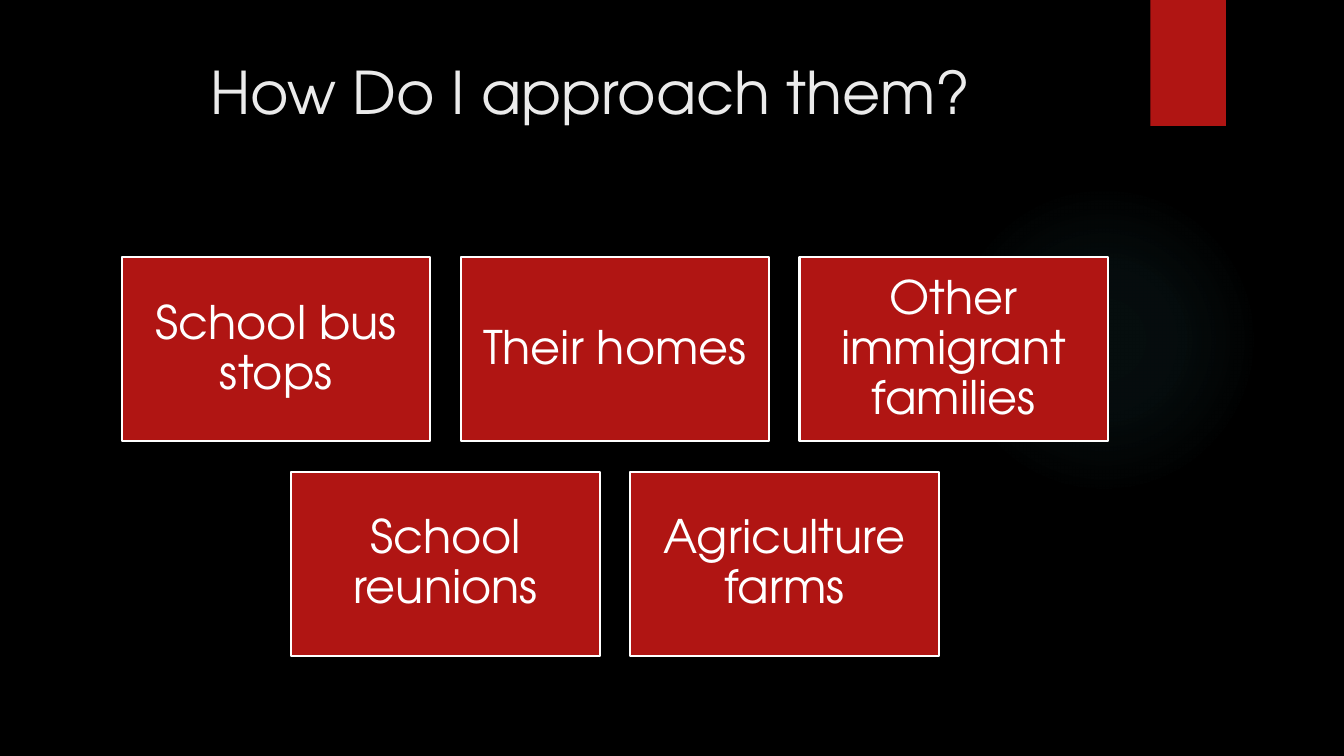
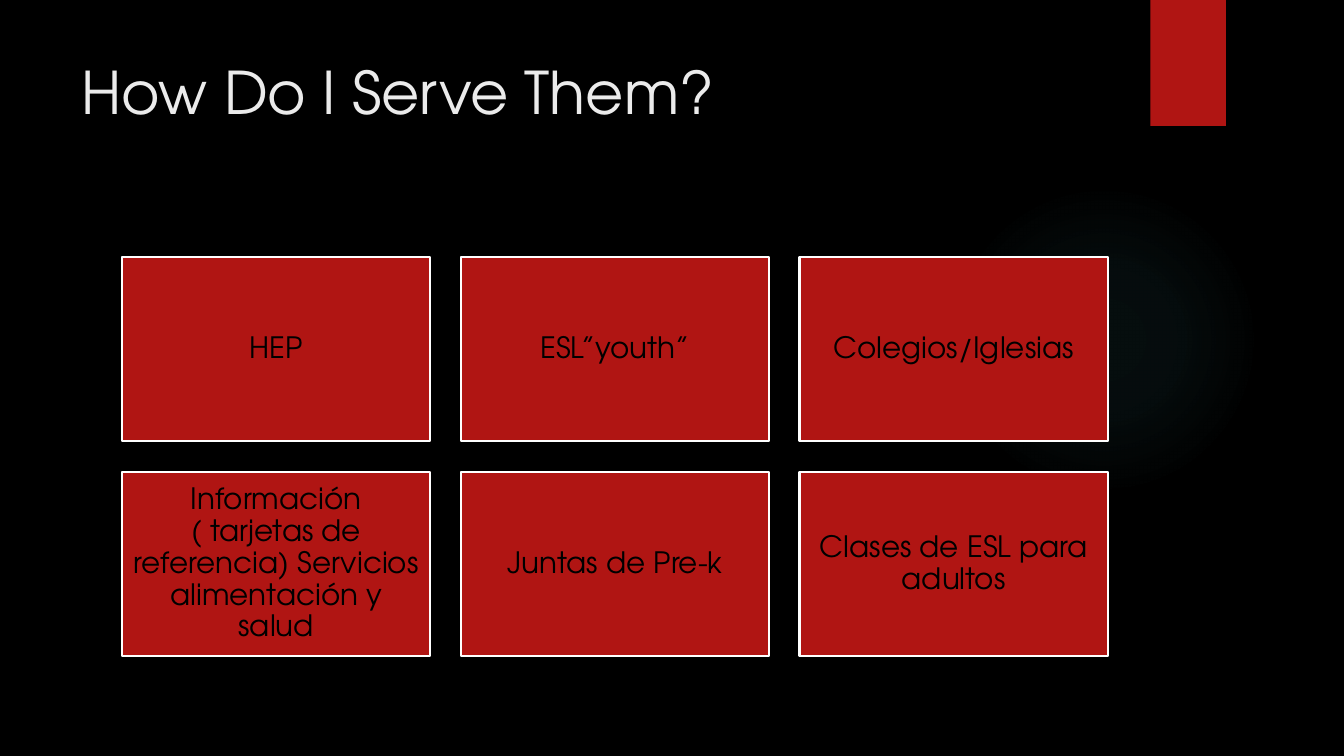
import lxml.etree
import pptx
import pptx.dml.color
import pptx.enum.shapes
import pptx.enum.text
import pptx.oxml
import pptx.oxml.ns
import pptx.util

Inches = pptx.util.Inches
Shape = pptx.enum.shapes.MSO_SHAPE
Align = pptx.enum.text.PP_ALIGN
Anchor = pptx.enum.text.MSO_ANCHOR

BLACK, WHITE, RED, TITLE, GLOW = "000000", "FFFFFF", "B01513", "EBEBEB", "50B9C1"
FONT = "TeX Gyre Adventor"
CARD_WIDTH, CARD_HEIGHT, CARD_GAP = 3.06, 1.83, 0.3
GRID_CENTER, GRID_TOP = 6.1, 2.55


def color(value):
    return pptx.dml.color.RGBColor.from_string(value)


def apply(target, values):
    for name, value in values.items():
        setattr(target, name, value)


class SlideBuilder:
    """Holds the deck's style and the slide being built."""

    def __init__(self):
        self.deck = pptx.Presentation()
        apply(self.deck, {"slide_width": Inches(13.33), "slide_height": Inches(7.5)})
        self.page = None

    def start(self, title, align):
        self.page = self.deck.slides.add_slide(self.deck.slide_layouts[6])
        background = self.page.background.fill
        background.solid()
        background.fore_color.rgb = color(BLACK)
        self.glow(9.41, 1.83, 3.08)
        self.shape(Shape.RECTANGLE, 11.41, 0, 0.75, 1.25)
        box = self.page.shapes.add_textbox(
            Inches(0.71), Inches(0.5), Inches(10.29), Inches(1.53))
        self.text(box, title, 42, TITLE, {"alignment": align}, {"word_wrap": True})

    def shape(self, kind, left, top, width, height, fill=RED):
        shape = self.page.shapes.add_shape(
            kind, Inches(left), Inches(top), Inches(width), Inches(height))
        shape.shadow.inherit = False
        shape.fill.solid()
        shape.fill.fore_color.rgb = color(fill)
        shape.line.fill.background()
        return shape

    def glow(self, left, top, size):
        """Draw a circle that fades out from its centre."""
        circle = self.shape(Shape.OVAL, left, top, size, size, GLOW)
        stops = "".join(
            f'<a:gs pos="{position * 1000}"><a:srgbClr val="{GLOW}">'
            f'<a:alpha val="{alpha * 1000}"/></a:srgbClr></a:gs>'
            for position, alpha in ((0, 7), (36, 6), (69, 0)))
        gradient = pptx.oxml.parse_xml(
            f'<a:gradFill {pptx.oxml.ns.nsdecls("a")}><a:gsLst>{stops}</a:gsLst>'
            '<a:path path="circle"><a:fillToRect l="50000" t="50000" r="50000" b="50000"/>'
            '</a:path></a:gradFill>')
        properties = circle.element.spPr
        properties.replace(properties.find(pptx.oxml.ns.qn("a:solidFill")), gradient)

    def text(self, box, words, size, ink, para_format, frame_format):
        frame = box.text_frame
        apply(frame, frame_format)
        para = frame.paragraphs[0]
        apply(para, para_format)
        span = para.add_run()
        span.text = words
        apply(span.font, {"name": FONT, "size": pptx.util.Pt(size)})
        span.font.color.rgb = color(ink)

    def card(self, words, left, top, size, ink, inset):
        card = self.shape(Shape.RECTANGLE, left, top, CARD_WIDTH, CARD_HEIGHT)
        card.line.color.rgb = color(WHITE)
        card.line.width = pptx.util.Pt(1.5)
        frame_format = {"word_wrap": True, "vertical_anchor": Anchor.MIDDLE}
        for side in ("left", "top", "right", "bottom"):
            frame_format[f"margin_{side}"] = Inches(inset)
        self.text(card, words, size, ink,
                  {"alignment": Align.CENTER, "line_spacing": 0.9}, frame_format)

    def cards(self, rows, **style):
        """Lay out rows of cards, each row centred on the grid."""
        for row, labels in enumerate(rows):
            pitch = CARD_WIDTH + CARD_GAP
            row_left = GRID_CENTER - (len(labels) * pitch - CARD_GAP) / 2
            top = GRID_TOP + row * (CARD_HEIGHT + CARD_GAP)
            for column, words in enumerate(labels):
                self.card(words, row_left + column * pitch, top, **style)


def main():
    builder = SlideBuilder()

    builder.start("How Do I approach them?", Align.CENTER)
    builder.cards([
        ["School bus stops", "Their homes", "Other immigrant families"],
        ["School reunions", "Agriculture farms"],
    ], size=33, ink=WHITE, inset=0.14)

    builder.start("How Do I Serve Them?", Align.LEFT)
    builder.cards([
        ["HEP", "ESL”youth”", "Colegios/Iglesias"],
        ["Información ( tarjetas de referencia) Servicios alimentación y salud",
         "Juntas de Pre-k", "Clases de ESL para adultos"],
    ], size=21, ink=BLACK, inset=0.09)

    builder.deck.save("out.pptx")


if __name__ == "__main__":
    main()
